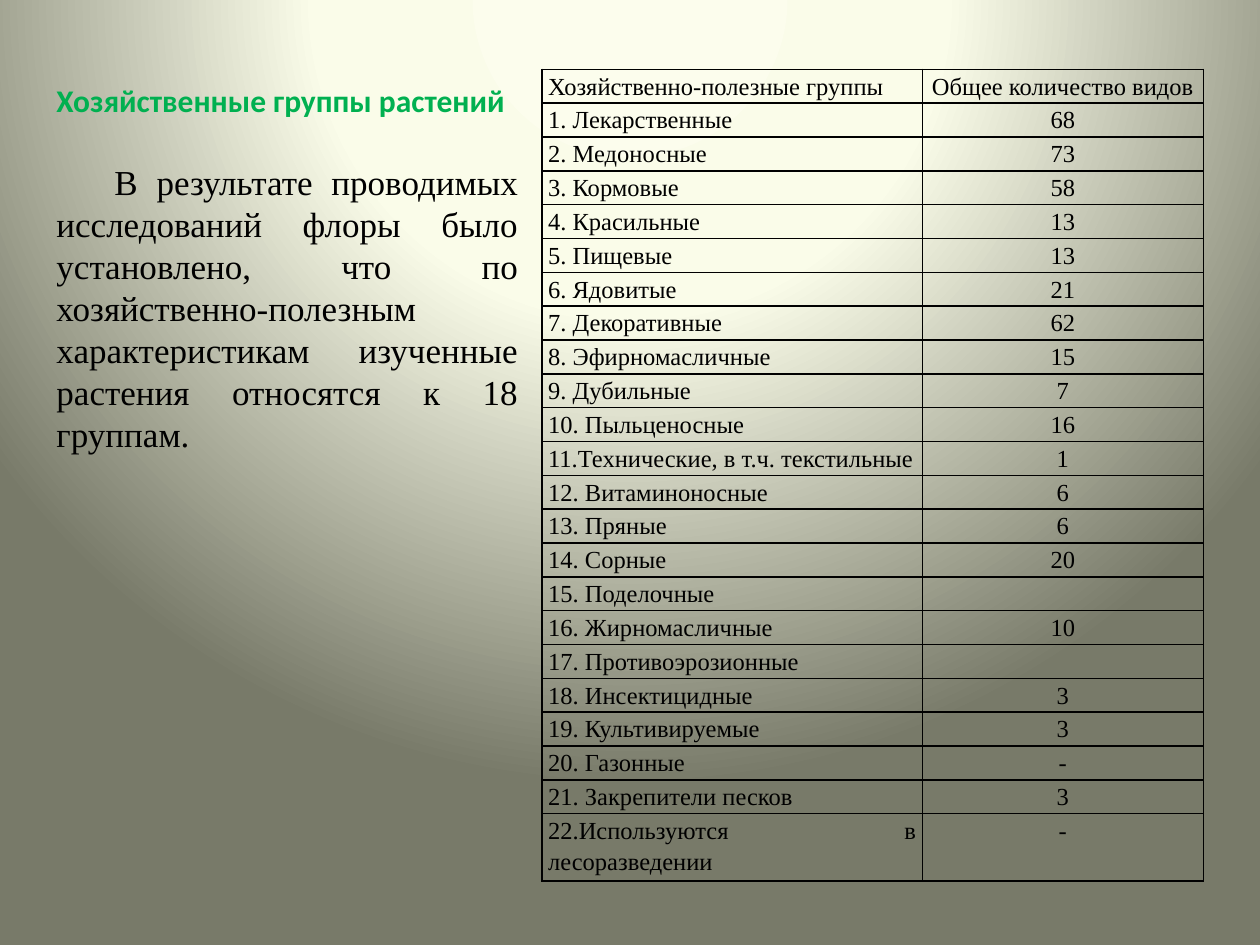
from pptx import Presentation
from pptx.dml.color import RGBColor
from pptx.enum.text import PP_ALIGN
from pptx.oxml import parse_xml
from pptx.oxml.ns import nsdecls, qn
from pptx.util import Inches, Pt
from lxml.etree import SubElement

THEME = {
    "title": {"name": "Calibri", "size": Pt(18), "bold": True, "color": "00B050"},
    "body": {"name": "Times New Roman", "size": Pt(20), "bold": False, "color": "000000"},
    "cell": {"name": "Times New Roman", "size": Pt(14), "bold": False, "color": "000000"},
    "border": "000000",
    "background": [(0, "FCFDED"), (40, "FAFCE9"), (100, "787A69")],
}


def add_text(p, text, style, **paragraph_format):
    for name, value in paragraph_format.items():
        setattr(p, name, value)
    r = p.add_run()
    r.text = text
    for name, value in THEME[style].items():
        if name == "color":
            r.font.color.rgb = RGBColor.from_string(value)
        else:
            setattr(r.font, name, value)


def add_borders(cell):
    tcPr = cell._tc.get_or_add_tcPr()
    for i, side in enumerate(("lnL", "lnR", "lnT", "lnB")):
        tcPr.insert(i, parse_xml(
            f'<a:{side} {nsdecls("a")} w="{Pt(1)}"><a:solidFill>'
            f'<a:srgbClr val="{THEME["border"]}"/></a:solidFill></a:{side}>'))


prs = Presentation()
prs.slide_width, prs.slide_height = Inches(10), Inches(7.5)
s = prs.slides.add_slide(prs.slide_layouts[6])

# Background: circular gradient centred above the slide
stops = "".join(f'<a:gs pos="{pos * 1000}"><a:srgbClr val="{color}"/></a:gs>'
                for pos, color in THEME["background"])
s._element.cSld.insert(0, parse_xml(
    f'<p:bg {nsdecls("p", "a")}><p:bgPr><a:gradFill rotWithShape="1"><a:gsLst>{stops}</a:gsLst>'
    '<a:path path="circle"><a:fillToRect l="50000" t="-80000" r="50000" b="180000"/></a:path>'
    '</a:gradFill><a:effectLst/></p:bgPr></p:bg>'))

# Heading and introduction
sp = s.shapes.add_textbox(Inches(0.35), Inches(0.28), Inches(3.86), Inches(3.64))
tf = sp.text_frame
tf.word_wrap = True
tf.margin_top = Inches(0.36)
add_text(tf.paragraphs[0], "Хозяйственные группы растений", "title")
p = tf.add_paragraph()
add_text(p, "В результате проводимых исследований флоры было установлено, что по "
            "хозяйственно-полезным характеристикам изученные растения относятся к 18 группам.",
         "body", alignment=PP_ALIGN.JUSTIFY, space_before=Pt(24))
p._p.get_or_add_pPr().set("indent", str(Inches(0.46)))

# Table of plant groups
rows = [
    ("Хозяйственно-полезные группы", "Общее количество видов"),
    ("1. Лекарственные", "68"),
    ("2. Медоносные", "73"),
    ("3. Кормовые", "58"),
    ("4. Красильные", "13"),
    ("5. Пищевые", "13"),
    ("6. Ядовитые", "21"),
    ("7. Декоративные", "62"),
    ("8. Эфирномасличные", "15"),
    ("9. Дубильные", "7"),
    ("10. Пыльценосные", "16"),
    ("11.Технические, в т.ч. текстильные", "1"),
    ("12. Витаминоносные", "6"),
    ("13. Пряные", "6"),
    ("14. Сорные", "20"),
    ("15. Поделочные", ""),
    ("16. Жирномасличные", "10"),
    ("17. Противоэрозионные", ""),
    ("18. Инсектицидные", "3"),
    ("19. Культивируемые", "3"),
    ("20. Газонные", "-"),
    ("21. Закрепители песков", "3"),
    ("22.Используются в лесоразведении", "-"),
]
row_height = Inches(0.22)
table = s.shapes.add_table(len(rows), 2, Inches(4.3), Inches(0.55),
                           Inches(5.25), row_height * len(rows)).table
table.first_row = table.horz_banding = False
for column, width in zip(table.columns, (3.02, 2.23)):
    column.width = Inches(width)

cell_format = {"margin_left": Inches(0.05), "margin_right": Inches(0.05),
               "margin_top": 0, "margin_bottom": 0}
alignments = (PP_ALIGN.JUSTIFY, PP_ALIGN.CENTER)
for i, row in enumerate(rows):
    table.rows[i].height = row_height
    for j, text in enumerate(row):
        cell = table.cell(i, j)
        for name, value in cell_format.items():
            setattr(cell, name, value)
        cell.fill.background()
        add_borders(cell)
        p = cell.text_frame.paragraphs[0]
        if text:
            add_text(p, text, "cell", alignment=alignments[j], line_spacing=1.15)
        else:  # keeps an empty cell from stretching its row
            SubElement(p._p, qn("a:endParaRPr"), sz=str(int(THEME["cell"]["size"].pt * 100)))

prs.save("out.pptx")
